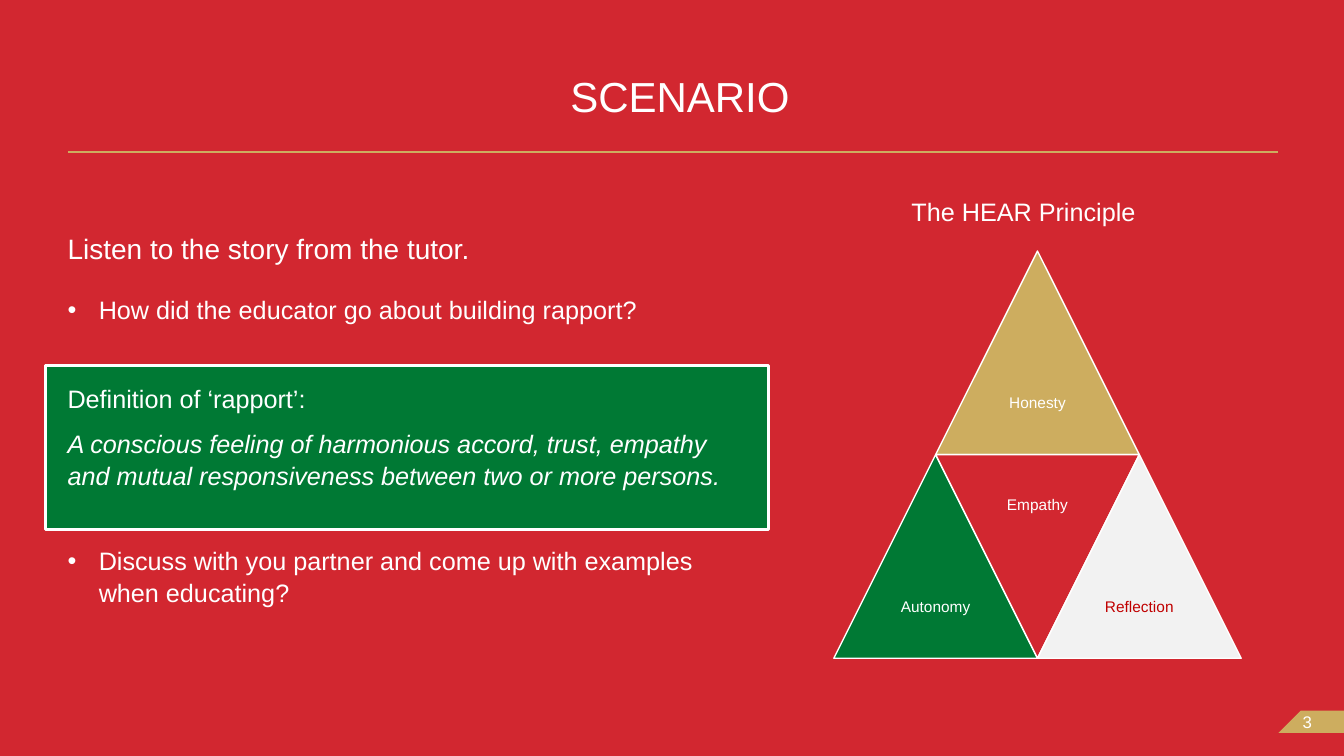
from dataclasses import dataclass

from lxml.etree import SubElement
from pptx import Presentation
from pptx.dml.color import RGBColor
from pptx.enum.shapes import MSO_CONNECTOR, MSO_SHAPE
from pptx.enum.text import MSO_ANCHOR, MSO_AUTO_SIZE, PP_ALIGN
from pptx.oxml.ns import qn
from pptx.shapes.autoshape import Shape
from pptx.slide import Slide
from pptx.text.text import TextFrame
from pptx.util import Pt

PX = 9144  # EMU, 100 px to the inch
SLIDE_WIDTH, SLIDE_HEIGHT = 1333, 750
FONT = "Arial"
COLOURS = {
    "red": "D22730",
    "gold": "CDAD5F",
    "green": "007934",
    "grey": "F2F2F2",
    "white": "FFFFFF",
    "dark red": "C00000",
}
BULLET_INDENT = 31
TRIANGLE_SIDE = 202
PYRAMID_LEFT, PYRAMID_TOP = 827, 249


@dataclass(frozen=True)
class Line:
    text: str
    size: int = 18
    colour: str = "white"
    italic: bool = False
    bullet: bool = False
    align: PP_ALIGN = PP_ALIGN.LEFT
    spacing: float = 1.04
    before: float = 0


@dataclass(frozen=True)
class Principle:
    name: str
    half_columns: int
    row: int
    fill: str
    colour: str = "white"
    inverted: bool = False


PRINCIPLES = [
    Principle("Honesty", 1, 0, "gold"),
    Principle("Autonomy", 0, 1, "green"),
    Principle("Empathy", 1, 1, "red", inverted=True),
    Principle("Reflection", 2, 1, "grey", "dark red"),
]


def rgb(colour: str) -> RGBColor:
    return RGBColor.from_string(COLOURS[colour])


def px(*lengths: int) -> list[int]:
    return [length * PX for length in lengths]


def write(frame: TextFrame, lines: list[Line], anchor: MSO_ANCHOR = MSO_ANCHOR.TOP,
          insets: tuple[int, int, int, int] = (0, 0, 0, 0)) -> None:
    """Fill a frame; insets run left, top, right, bottom."""
    frame.word_wrap = True
    frame.auto_size = MSO_AUTO_SIZE.NONE
    frame.vertical_anchor = anchor
    (frame.margin_left, frame.margin_top,
     frame.margin_right, frame.margin_bottom) = px(*insets)
    for index, line in enumerate(lines):
        paragraph = frame.add_paragraph() if index else frame.paragraphs[0]
        paragraph.text = line.text
        paragraph.alignment = line.align
        paragraph.line_spacing = line.spacing
        if line.before:
            paragraph.space_before = Pt(line.before)
        if line.bullet:
            properties = paragraph._p.get_or_add_pPr()
            properties.set("marL", str(BULLET_INDENT * PX))
            properties.set("indent", str(-BULLET_INDENT * PX))
            SubElement(properties, qn("a:buFont"), typeface=FONT)
            SubElement(properties, qn("a:buChar"), char="•")
        font = paragraph.font
        font.name = FONT
        font.size = Pt(line.size)
        font.italic = line.italic
        font.color.rgb = rgb(line.colour)


def paint(shape: Shape, fill: str, outline: float = 0) -> None:
    shape.shadow.inherit = False
    shape.fill.solid()
    shape.fill.fore_color.rgb = rgb(fill)
    if outline:
        shape.line.color.rgb = rgb("white")
        shape.line.width = Pt(outline)
    else:
        shape.line.fill.background()


def add_text(slide: Slide, box: tuple[int, int, int, int], lines: list[Line]) -> None:
    write(slide.shapes.add_textbox(*px(*box)).text_frame, lines)


def add_title(slide: Slide) -> None:
    title = slide.shapes.title
    title.left, title.top, title.width, title.height = px(142, 33, 1065, 87)
    write(title.text_frame,
          [Line("SCENARIO", 30, align=PP_ALIGN.CENTER, spacing=0.8)],
          MSO_ANCHOR.BOTTOM)
    rule = slide.shapes.add_connector(MSO_CONNECTOR.STRAIGHT, *px(67, 151, 1268, 151))
    rule.line.color.rgb = rgb("gold")
    rule.line.width = Pt(1)
    SubElement(rule._element.spPr, qn("a:effectLst"))


def add_definition(slide: Slide) -> None:
    definition = slide.shapes.add_shape(MSO_SHAPE.RECTANGLE, *px(45, 363, 717, 162))
    paint(definition, "green", 2.25)
    write(definition.text_frame, [
        Line("Definition of ‘rapport’:"),
        Line("A conscious feeling of harmonious accord, trust, empathy and mutual "
             "responsiveness between two or more persons.", italic=True, before=10),
    ], insets=(22, 16, 22, 0))


def add_principle(slide: Slide, principle: Principle) -> None:
    preset = MSO_SHAPE.FLOWCHART_MERGE if principle.inverted else MSO_SHAPE.ISOSCELES_TRIANGLE
    left = PYRAMID_LEFT + principle.half_columns * TRIANGLE_SIDE // 2
    top = PYRAMID_TOP + principle.row * TRIANGLE_SIDE
    triangle = slide.shapes.add_shape(preset, *px(left, top, TRIANGLE_SIDE, TRIANGLE_SIDE))
    paint(triangle, principle.fill, 1)
    write(triangle.text_frame,
          [Line(principle.name, 11, principle.colour, align=PP_ALIGN.CENTER, spacing=0.9)],
          MSO_ANCHOR.MIDDLE, (5, 5, 5, 5))


def add_page_number(slide: Slide) -> None:
    outline = slide.shapes.build_freeform(1290, 705, scale=PX)
    outline.add_line_segments([(SLIDE_WIDTH, 705), (SLIDE_WIDTH, 727), (1268, 727)])
    tab = outline.convert_to_shape()
    paint(tab, "gold")
    write(tab.text_frame, [Line("3", 12, spacing=1.0)], MSO_ANCHOR.MIDDLE, (24, 0, 0, 0))


def main() -> None:
    presentation = Presentation()
    presentation.slide_width, presentation.slide_height = px(SLIDE_WIDTH, SLIDE_HEIGHT)
    slide = presentation.slides.add_slide(presentation.slide_layouts[5])
    slide.background.fill.solid()
    slide.background.fill.fore_color.rgb = rgb("red")

    add_title(slide)
    add_text(slide, (67, 228, 673, 110), [
        Line("Listen to the story from the tutor.", 20),
        Line("How did the educator go about building rapport?", bullet=True, before=20.4),
    ])
    add_definition(slide)
    add_text(slide, (67, 540, 673, 70), [
        Line("Discuss with you partner and come up with examples when educating?", bullet=True),
    ])
    add_text(slide, (904, 198, 250, 30), [Line("The HEAR Principle", spacing=0.9)])
    for principle in PRINCIPLES:
        add_principle(slide, principle)
    add_page_number(slide)
    presentation.save("out.pptx")


if __name__ == "__main__":
    main()
